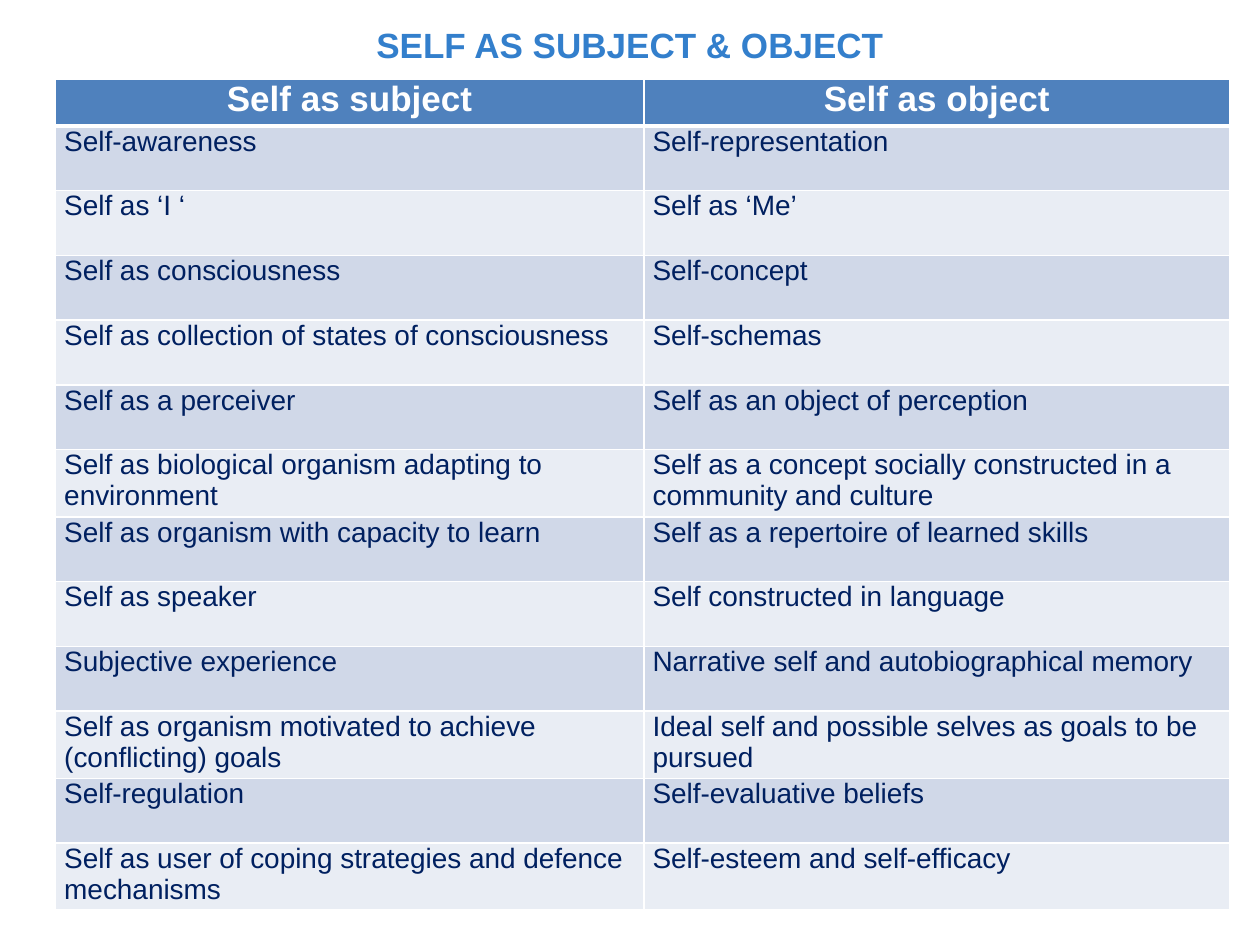
import lxml.etree
import pptx
import pptx.dml.color
import pptx.enum.text
import pptx.oxml.ns
import pptx.util

FONT = "Arial"
WHITE = "FFFFFF"
HEADER_FILL = "4F81BD"
BAND_FILLS = ("D0D8E8", "E9EDF4")
HEADER_HEIGHT = 0.37
COLUMN_WIDTHS = (4.67, 4.65)
ROWS = [
    ("Self as subject", "Self as object"),
    ("Self-awareness", "Self-representation"),
    ("Self as ‘I ‘", "Self as ‘Me’"),
    ("Self as consciousness", "Self-concept"),
    ("Self as collection of states of consciousness", "Self-schemas"),
    ("Self as a perceiver", "Self as an object of perception"),
    ("Self as biological organism adapting to environment",
     "Self as a concept socially constructed in a community and culture"),
    ("Self as organism with capacity to learn", "Self as a repertoire of learned skills"),
    ("Self as speaker", "Self constructed in language"),
    ("Subjective experience", "Narrative self and autobiographical memory"),
    ("Self as organism motivated to achieve (conflicting) goals",
     "Ideal self and possible selves as goals to be pursued"),
    ("Self-regulation", "Self-evaluative beliefs"),
    ("Self as user of coping strategies and defence mechanisms",
     "Self-esteem and self-efficacy"),
]


def color(value):
    return pptx.dml.color.RGBColor.from_string(value)


def inches(box):
    return [pptx.util.Inches(length) for length in box]


def style_font(paragraph, size, value, bold):
    paragraph.font.name = FONT
    paragraph.font.size = pptx.util.Pt(size)
    paragraph.font.bold = bold
    paragraph.font.color.rgb = color(value)


def add_title(slide, box, text):
    shape = slide.shapes.add_textbox(*inches(box))
    frame = shape.text_frame
    frame.word_wrap = False
    frame.margin_top = pptx.util.Inches(0.09)
    frame.margin_bottom = 0
    paragraph = frame.paragraphs[0]
    paragraph.text = text
    paragraph.alignment = pptx.enum.text.PP_ALIGN.CENTER
    paragraph.line_spacing = 1.1
    style_font(paragraph, 20, "337FCC", True)


def set_borders(cell, widths):
    qn = pptx.oxml.ns.qn
    properties = cell._tc.get_or_add_tcPr()
    for index, (side, width) in enumerate(widths.items()):
        line = lxml.etree.Element(qn(f"a:ln{side}"), w=str(pptx.util.Pt(width)))
        fill = lxml.etree.SubElement(line, qn("a:solidFill"))
        lxml.etree.SubElement(fill, qn("a:srgbClr"), val=WHITE)
        properties.insert(index, line)


def fill_cell(cell, text, row_index):
    header = row_index == 0
    cell.margin_left = cell.margin_right = pptx.util.Inches(0.07)
    cell.margin_top = cell.margin_bottom = 0
    cell.fill.solid()
    cell.fill.fore_color.rgb = color(HEADER_FILL if header else BAND_FILLS[(row_index - 1) % 2])
    paragraph = cell.text_frame.paragraphs[0]
    paragraph.text = text
    paragraph.space_before = paragraph.space_after = pptx.util.Pt(2)
    if header:
        paragraph.alignment = pptx.enum.text.PP_ALIGN.CENTER
        style_font(paragraph, 20, WHITE, True)
    else:
        style_font(paragraph, 16, "002060", False)
    set_borders(cell, {"L": 1, "R": 1, "T": 3 if row_index == 1 else 1, "B": 3 if header else 1})


def add_comparison(slide, box, rows):
    table = slide.shapes.add_table(len(rows), len(COLUMN_WIDTHS), *inches(box)).table
    for column, width in zip(table.columns, COLUMN_WIDTHS):
        column.width = pptx.util.Inches(width)
    body_height = (box[3] - HEADER_HEIGHT) / (len(rows) - 1)
    for row_index, texts in enumerate(rows):
        height = body_height if row_index else HEADER_HEIGHT
        table.rows[row_index].height = pptx.util.Inches(height)
        for column_index, text in enumerate(texts):
            fill_cell(table.cell(row_index, column_index), text, row_index)


def main():
    presentation = pptx.Presentation()
    presentation.slide_width, presentation.slide_height = inches((10, 7.5))
    slide = presentation.slides.add_slide(presentation.slide_layouts[6])
    add_title(slide, (2.87, 0.06, 4.26, 0.41), "SELF AS SUBJECT & OBJECT")
    add_comparison(slide, (0.44, 0.63, sum(COLUMN_WIDTHS), 6.54), ROWS)
    presentation.save("out.pptx")


if __name__ == "__main__":
    main()
